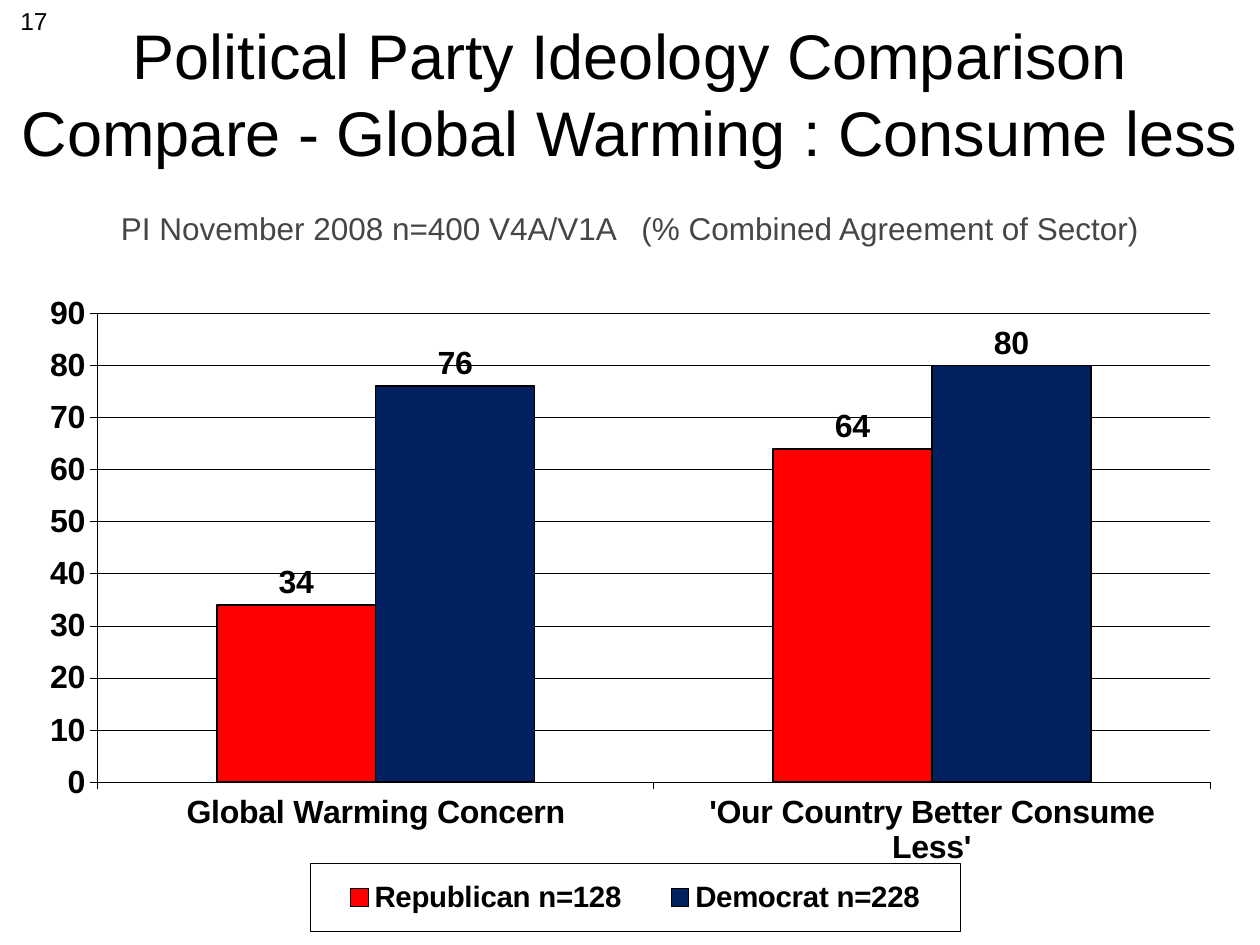
from lxml import etree
from pptx import Presentation
from pptx import util as u
from pptx.chart.data import CategoryChartData
from pptx.dml.color import RGBColor
from pptx.enum import chart as c, text as t
from pptx.oxml import parse_xml
from pptx.oxml.ns import nsdecls, qn

SCALE = 914400 / 126  # EMU per px
FONT = "Arial"
BLACK = RGBColor(0x00, 0x00, 0x00)
GRAY = RGBColor(0x46, 0x46, 0x46)
RED = RGBColor(0xFF, 0x00, 0x00)
NAVY = RGBColor(0x00, 0x20, 0x60)

TITLE_LINES = [
    ("Political Party Ideology Comparison", 36, BLACK),
    ("Compare - Global Warming : Consume less", 36, BLACK),
    ("PI November 2008 n=400 V4A/V1A   (% Combined Agreement of Sector)", 18, GRAY),
]
CATEGORIES = ["Global Warming Concern", "'Our Country Better Consume Less'"]
SERIES = [("Republican n=128", (34, 64), RED), ("Democrat n=228", (76, 80), NAVY)]


def px(*lengths):
    return [u.Emu(round(length * SCALE)) for length in lengths]


def set_attributes(target, **values):
    for name, value in values.items():
        setattr(target, name, value)


def set_font(font, size, color=BLACK, bold=False):
    set_attributes(font, name=FONT, size=u.Pt(size), bold=bold)
    font.color.rgb = color


def set_line(line, width):
    line.color.rgb = BLACK
    line.width = u.Pt(width)


def add_title(slide):
    title = slide.shapes.title
    left, top, width, height = px(0, 0, 1260, 262)
    set_attributes(title, left=left, top=top, width=width, height=height)
    set_attributes(title.text_frame, word_wrap=True, auto_size=t.MSO_AUTO_SIZE.NONE,
                   vertical_anchor=t.MSO_ANCHOR.MIDDLE)
    paragraph = title.text_frame.paragraphs[0]
    set_attributes(paragraph, alignment=t.PP_ALIGN.CENTER, line_spacing=u.Pt(44))
    for index, (words, size, color) in enumerate(TITLE_LINES):
        if index:
            # A break needs its own size, or it takes the larger title default
            paragraph.add_line_break()
            etree.SubElement(paragraph._p[-1], qn("a:rPr"), sz="3600")
        run = paragraph.add_run()
        run.text = words
        set_font(run.font, size, color)


def add_page_number(slide, number):
    box = slide.shapes.add_textbox(*px(0, 0, 60, 66))
    box.text_frame.word_wrap = True
    paragraph = box.text_frame.paragraphs[0]
    paragraph.alignment = t.PP_ALIGN.RIGHT
    run = paragraph.add_run()
    run.text = number
    set_font(run.font, 14)


def set_layout(parent, position, inner, **fractions):
    """Place the plot area or legend by fractions of the chart."""
    for old in parent.findall(qn("c:layout")):
        parent.remove(old)
    layout = etree.Element(qn("c:layout"))
    manual = etree.SubElement(layout, qn("c:manualLayout"))
    values = {"layoutTarget": "inner"} if inner else {}
    values.update(xMode="edge", yMode="edge", **fractions)
    for name, value in values.items():
        etree.SubElement(manual, qn(f"c:{name}"), val=str(value))
    parent.insert(position, layout)


def format_axis(axis):
    set_attributes(axis, major_tick_mark=c.XL_TICK_MARK.OUTSIDE,
                   minor_tick_mark=c.XL_TICK_MARK.NONE)
    set_font(axis.tick_labels.font, 18.3, bold=True)
    set_line(axis.format.line, 0.25)


def format_series(series, color):
    series.format.fill.solid()
    series.format.fill.fore_color.rgb = color
    set_line(series.format.line, 1)
    labels = series.data_labels
    set_attributes(labels, show_value=True, position=c.XL_LABEL_POSITION.OUTSIDE_END)
    set_font(labels.font, 18.3, bold=True)


def format_legend(chart):
    chart.has_legend = True
    legend = chart.legend
    set_attributes(legend, position=c.XL_LEGEND_POSITION.BOTTOM, include_in_layout=False)
    set_font(legend.font, 16.8, bold=True)
    set_layout(legend._element, 1, False, x=0.24, y=0.88, w=0.52, h=0.1)
    border = parse_xml(
        f'<c:spPr {nsdecls("c", "a")}><a:ln w="3175"><a:solidFill>'
        f'<a:srgbClr val="{BLACK}"/></a:solidFill></a:ln></c:spPr>')
    legend._element.find(qn("c:txPr")).addprevious(border)


def add_column_chart(slide):
    data = CategoryChartData()
    data.categories = CATEGORIES
    for name, values, _ in SERIES:
        data.add_series(name, values)
    frame = slide.shapes.add_chart(
        c.XL_CHART_TYPE.COLUMN_CLUSTERED, *px(10, 266, 1250, 679), data)
    chart = frame.chart
    chart.has_title = False
    set_font(chart.font, 18.3, bold=True)

    # Columns
    plot = chart.plots[0]
    set_attributes(plot, gap_width=150, overlap=0, vary_by_categories=False)
    for series, (_, _, color) in zip(plot.series, SERIES):
        format_series(series, color)

    # Axes and gridlines
    format_axis(chart.category_axis)
    format_axis(chart.value_axis)
    set_attributes(chart.value_axis, minimum_scale=0, maximum_scale=90, major_unit=10,
                   has_major_gridlines=True)
    set_line(chart.value_axis.major_gridlines.format.line, 0.25)

    plot_area = chart._chartSpace.find(f".//{qn('c:plotArea')}")
    set_layout(plot_area, 0, True, x=0.07, y=0.07, w=0.89, h=0.69)
    format_legend(chart)


def main():
    presentation = Presentation()
    width, height = px(1260, 945)
    set_attributes(presentation, slide_width=width, slide_height=height)
    slide = presentation.slides.add_slide(presentation.slide_layouts[5])
    add_title(slide)
    add_column_chart(slide)
    add_page_number(slide, "17")
    presentation.save("out.pptx")


if __name__ == "__main__":
    main()
